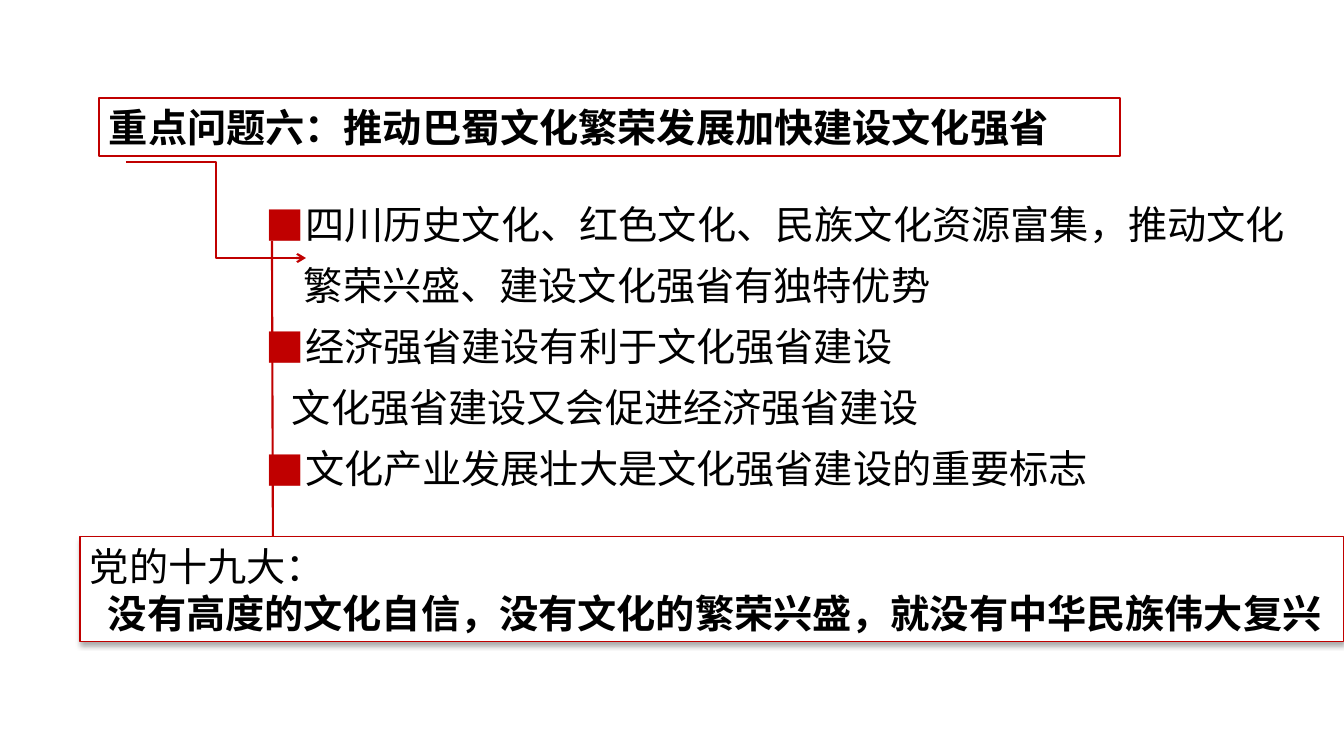
from lxml import etree
from pptx import Presentation
from pptx.dml.color import RGBColor
from pptx.enum.shapes import MSO_CONNECTOR, MSO_SHAPE
from pptx.enum.text import MSO_ANCHOR, MSO_AUTO_SIZE, PP_ALIGN
from pptx.oxml.ns import qn
from pptx.util import Pt

RECT = MSO_SHAPE.RECTANGLE
STRAIGHT, ELBOW = MSO_CONNECTOR.STRAIGHT, MSO_CONNECTOR.ELBOW
LEFT, JUSTIFY = PP_ALIGN.LEFT, PP_ALIGN.JUSTIFY

PX = 914400 / 100.8
FONT = "Noto Sans CJK SC"
COLORS = {"red": "C00000", "text": "000000", "paper": "FFFFFF"}

TITLE = [("重点问题六：推动巴蜀文化繁荣发展加快建设文化强省", True, 0, 0, False)]
POINTS = [
    ("四川历史文化、红色文化、民族文化资源富集，推动文化繁荣兴盛、建设文化强省有独特优势", False, 38, -38, True),
    ("经济强省建设有利于文化强省建设", False, 38, -38, True),
    ("文化强省建设又会促进经济强省建设", False, 38, -12, False),
    ("文化产业发展壮大是文化强省建设的重要标志", False, 38, -38, True),
]
QUOTE = [
    ("党的十九大：", False, 0, 0, False),
    ("没有高度的文化自信，没有文化的繁荣兴盛，就没有中华民族伟大复兴", True, 18, 0, False),
]

POINTS_BOX = (256, 181, 1039, 319)
TITLE_BOX = (99, 98, 1021, 58)
QUOTE_BOX = (80, 537, 1264, 105)
ARROW = (126, 162, 306, 258)
STEM = (272, 241, 273, 567)


def px(n):
    return round(n * PX)


def rgb(name):
    return RGBColor.from_string(COLORS[name])


def add(parent, tag, **attrs):
    return etree.SubElement(parent, qn(tag), {k: str(v) for k, v in attrs.items()})


def write(shape, rows, align, spacing):
    tf = shape.text_frame
    frame = {"word_wrap": True, "auto_size": MSO_AUTO_SIZE.SHAPE_TO_FIT_TEXT,
             "vertical_anchor": MSO_ANCHOR.TOP}
    for key, value in frame.items():
        setattr(tf, key, value)
    for i, (text, bold, margin, indent, bullet) in enumerate(rows):
        p = tf.paragraphs[0] if i == 0 else tf.add_paragraph()
        p.alignment, p.line_spacing = align, spacing
        pPr = p._p.get_or_add_pPr()
        pPr.set("marL", str(px(margin)))
        pPr.set("indent", str(px(indent)))
        if bullet:
            add(add(pPr, "a:buClr"), "a:srgbClr", val=COLORS["red"])
            add(pPr, "a:buFont", typeface=FONT)
            add(pPr, "a:buChar", char="■")
        r = p.add_run()
        r.text = text
        for key, value in {"name": FONT, "size": Pt(28), "bold": bold}.items():
            setattr(r.font, key, value)
        r.font.color.rgb = rgb("text")
        add(r._r.get_or_add_rPr(), "a:ea", typeface=FONT)


def add_box(box, rows, width):
    sp = s.shapes.add_shape(RECT, *map(px, box))
    sp.shadow.inherit = False
    sp.fill.solid()
    sp.fill.fore_color.rgb = rgb("paper")
    sp.line.color.rgb = rgb("red")
    sp.line.width = Pt(width)
    write(sp, rows, LEFT, 1.0)
    return sp


def add_line(kind, ends):
    cx = s.shapes.add_connector(kind, *map(px, ends))
    cx.line.color.rgb = rgb("red")
    cx.line.width = Pt(1.5)
    add(cx._element.spPr, "a:effectLst")
    return cx


prs = Presentation()
prs.slide_width, prs.slide_height = px(1344), px(756)
s = prs.slides.add_slide(prs.slide_layouts[6])

write(s.shapes.add_textbox(*map(px, POINTS_BOX)), POINTS, JUSTIFY, 1.3)
add_box(TITLE_BOX, TITLE, 1.5)
arrow = add_line(ELBOW, ARROW)
add(arrow.line._get_or_add_ln(), "a:tailEnd", type="arrow")
add_line(STRAIGHT, STEM)

quote = add_box(QUOTE_BOX, QUOTE, 0.75)
effects = quote._element.spPr.find(qn("a:effectLst"))
shadow = add(effects, "a:outerShdw", blurRad=Pt(3.5), dist=Pt(2.2), dir=5400000, rotWithShape=0)
add(add(shadow, "a:srgbClr", val=COLORS["text"]), "a:alpha", val=32000)

prs.save("out.pptx")
